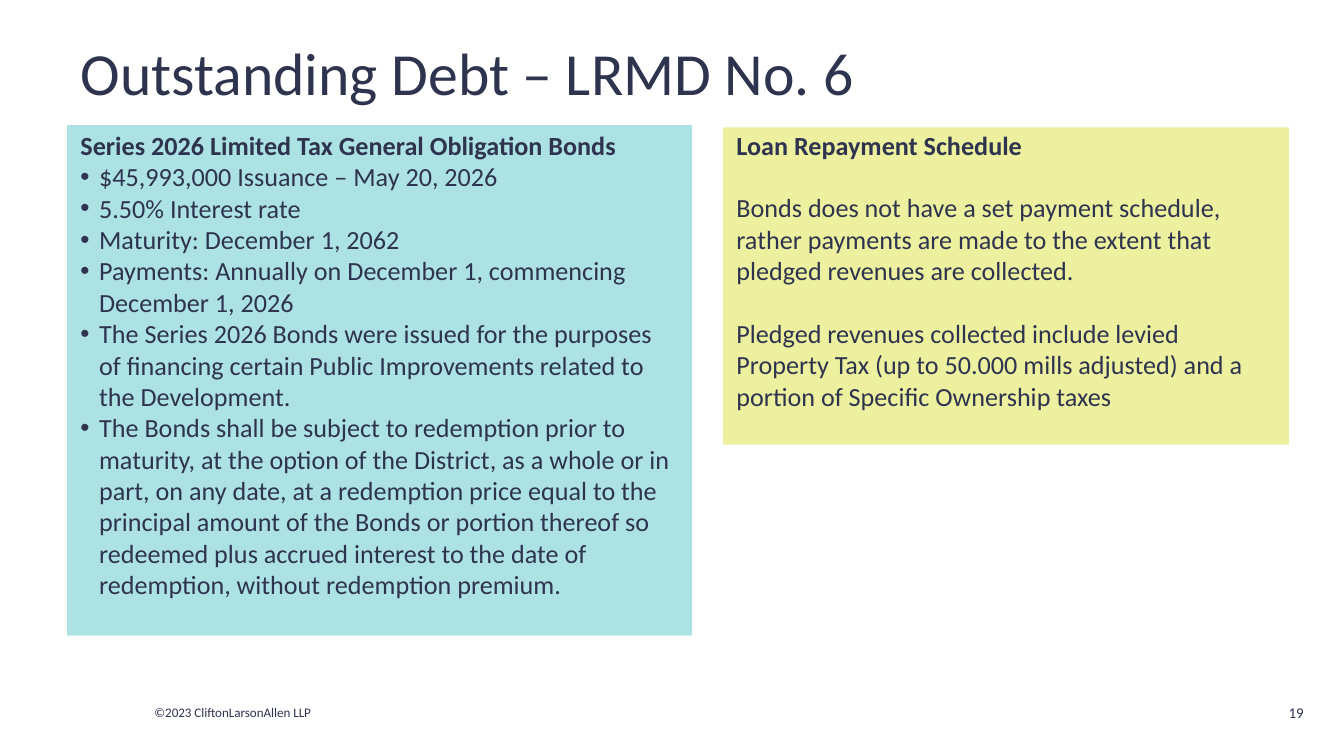
from lxml.etree import SubElement
from pptx import Presentation
from pptx.dml.color import RGBColor
from pptx.enum.shapes import MSO_SHAPE
from pptx.enum.text import MSO_ANCHOR, PP_ALIGN
from pptx.oxml.ns import qn
from pptx.util import Pt

NAVY = RGBColor(0x2E, 0x33, 0x4E)
TEAL = RGBColor(0x7D, 0xD2, 0xD3)
LIME = RGBColor(0xE2, 0xE8, 0x68)
FONT = "Calibri"
BODY_SIZE = 14
LINE_HEIGHT = 16.8
PANEL_OPACITY = 63

BOND_TERMS = [
    "$45,993,000 Issuance – May 20, 2026",
    "5.50% Interest rate",
    "Maturity: December 1, 2062",
    "Payments: Annually on December 1, commencing December 1, 2026",
    "The Series 2026 Bonds were issued for the purposes of financing certain "
    "Public Improvements related to the Development.",
    "The Bonds shall be subject to redemption prior to maturity, at the option "
    "of the District, as a whole or in part, on any date, at a redemption price "
    "equal to the principal amount of the Bonds or portion thereof so redeemed "
    "plus accrued interest to the date of redemption, without redemption premium.",
]
REPAYMENT_NOTES = [
    "Bonds does not have a set payment schedule, rather payments are made to "
    "the extent that pledged revenues are collected.",
    "Pledged revenues collected include levied Property Tax (up to 50.000 mills "
    "adjusted) and a portion of Specific Ownership taxes",
]


def write_paragraph(paragraph, text, size=BODY_SIZE, bold=False,
                    align=PP_ALIGN.LEFT, bullet=False, space_before=0):
    properties = paragraph._p.get_or_add_pPr()
    if bullet:
        indent = Pt(10)
        properties.set("marL", str(indent))
        properties.set("indent", str(-indent))
        SubElement(properties, qn("a:buFont"), typeface="Arial")
        SubElement(properties, qn("a:buChar"), char="•")
    paragraph.alignment = align
    paragraph.space_before = Pt(space_before)
    run = paragraph.add_run()
    run.text = text
    run.font.name = FONT
    run.font.size = Pt(size)
    run.font.bold = bold
    run.font.color.rgb = NAVY


def place_title(slide, text, left, top, width, height):
    title = slide.shapes.title
    title.left, title.top = Pt(left), Pt(top)
    title.width, title.height = Pt(width), Pt(height)
    title.text_frame.vertical_anchor = MSO_ANCHOR.MIDDLE
    write_paragraph(title.text_frame.paragraphs[0], text, size=32)


def add_panel(slide, heading, items, color, left, top, width, height, **item_format):
    """Draw a tinted box with a bold heading and one paragraph per item."""
    panel = slide.shapes.add_shape(
        MSO_SHAPE.RECTANGLE, Pt(left), Pt(top), Pt(width), Pt(height))
    panel.shadow.inherit = False
    panel.line.fill.background()
    panel.fill.solid()
    panel.fill.fore_color.rgb = color
    tint = panel._element.spPr.find(qn("a:solidFill")).find(qn("a:srgbClr"))
    SubElement(tint, qn("a:alpha"), val=str(PANEL_OPACITY * 1000))

    frame = panel.text_frame
    frame.word_wrap = True
    frame.vertical_anchor = MSO_ANCHOR.MIDDLE
    frame.margin_bottom = Pt(3.6 + LINE_HEIGHT)
    write_paragraph(frame.paragraphs[0], heading, bold=True)
    for item in items:
        write_paragraph(frame.add_paragraph(), item, **item_format)


def add_footer_text(slide, text, left, top, width, height, **text_format):
    box = slide.shapes.add_textbox(Pt(left), Pt(top), Pt(width), Pt(height))
    box.text_frame.word_wrap = True
    box.text_frame.vertical_anchor = MSO_ANCHOR.MIDDLE
    write_paragraph(box.text_frame.paragraphs[0], text, **text_format)


def build_debt_slide(presentation):
    slide = presentation.slides.add_slide(presentation.slide_layouts[5])
    place_title(slide, "Outstanding Debt – LRMD No. 6", 36, 11.5, 648, 54)
    add_panel(slide, "Series 2026 Limited Tax General Obligation Bonds",
              BOND_TERMS, TEAL, 36, 67, 334.8, 273.6, bullet=True)
    add_panel(slide, "Loan Repayment Schedule", REPAYMENT_NOTES, LIME,
              387.4, 68.2, 303.1, 170, space_before=LINE_HEIGHT)
    add_footer_text(slide, "©2023 CliftonLarsonAllen LLP",
                    75.6, 373.7, 108.7, 15.8, size=7)
    add_footer_text(slide, "19", 674.6, 368, 31, 27.4, size=8, align=PP_ALIGN.RIGHT)


def main():
    presentation = Presentation()
    presentation.slide_width, presentation.slide_height = Pt(720), Pt(405)
    build_debt_slide(presentation)
    presentation.save("out.pptx")


if __name__ == "__main__":
    main()
